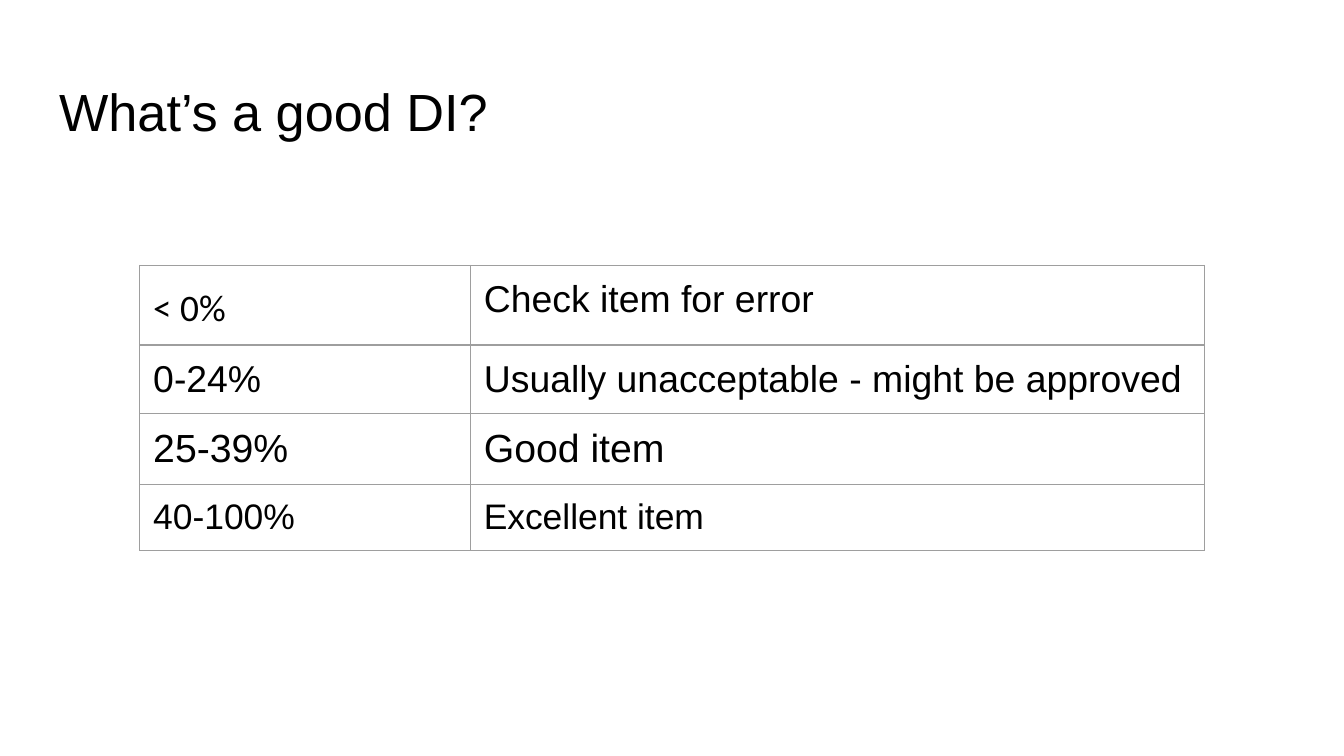
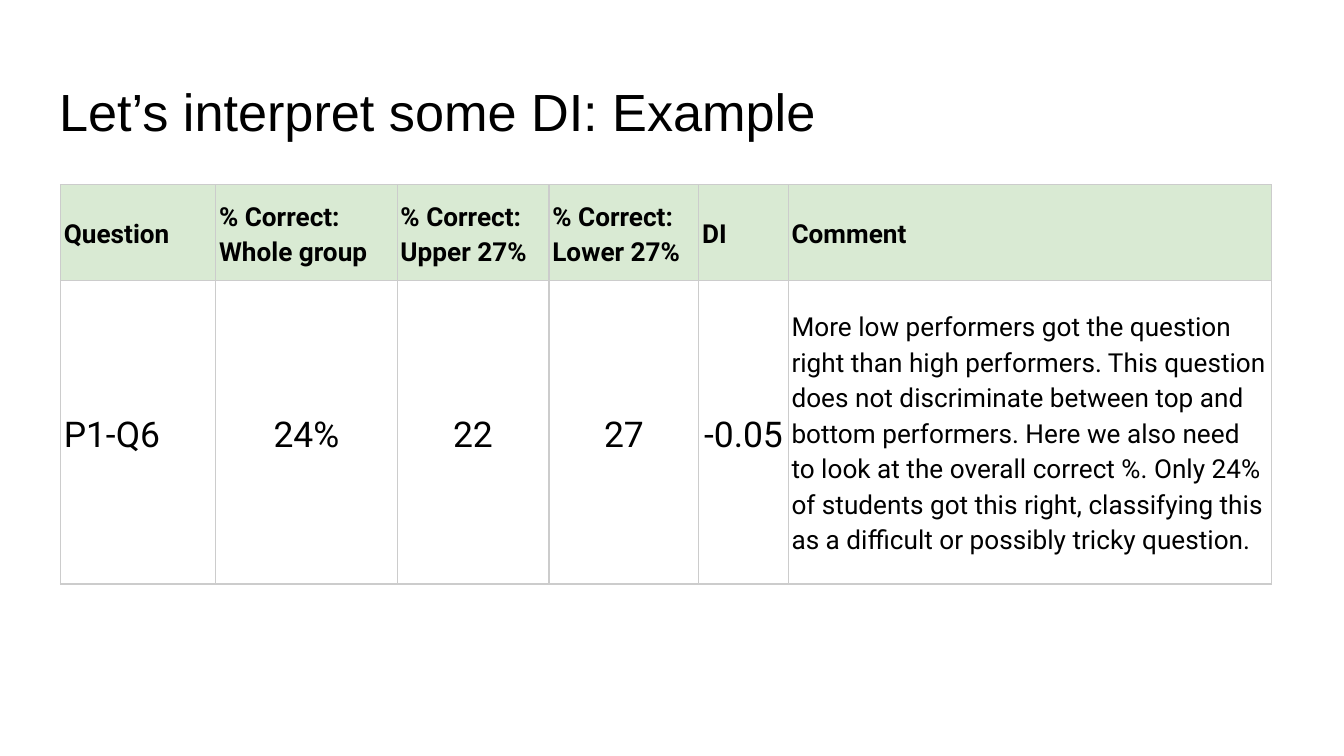
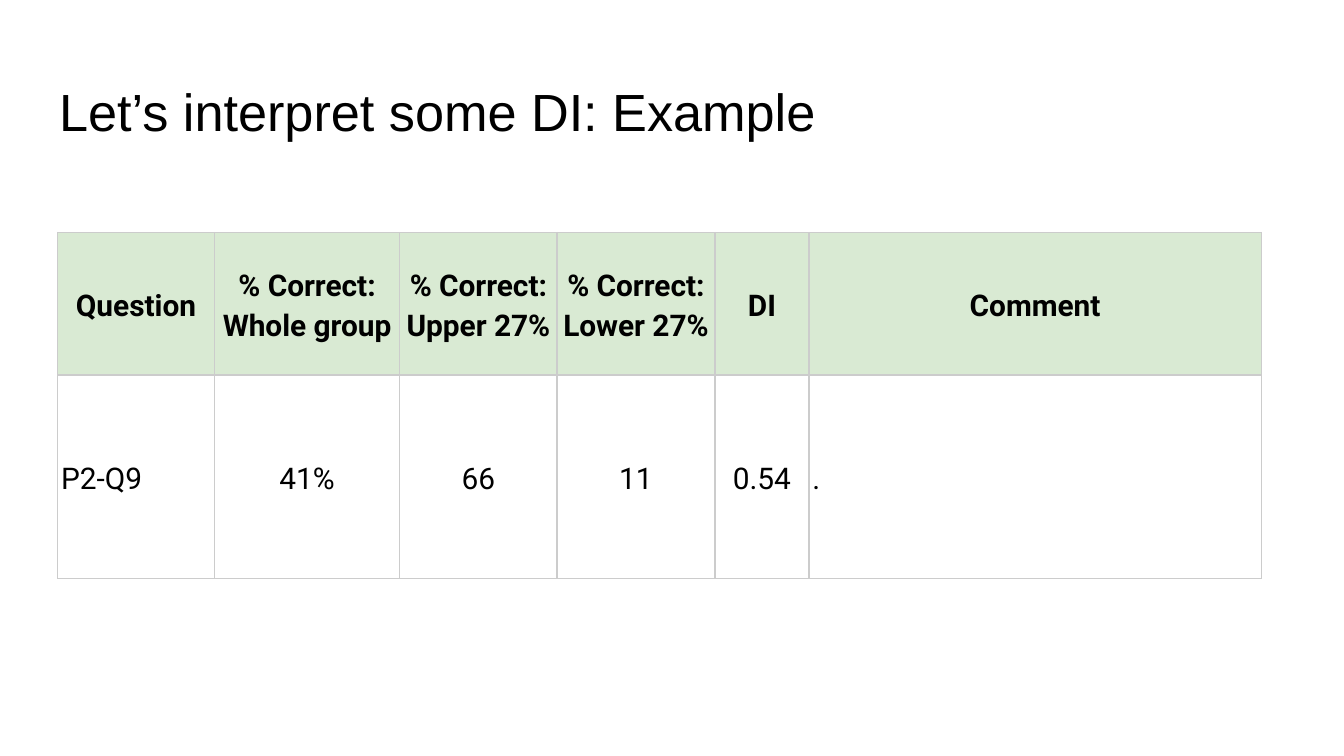
from dataclasses import dataclass

from lxml.etree import SubElement
from pptx import Presentation
from pptx.dml.color import RGBColor
from pptx.enum.text import MSO_ANCHOR, PP_ALIGN
from pptx.oxml.ns import qn
from pptx.util import Emu, Pt

# Shared scale, colours and fonts
PX = 4572  # 200 px to the inch
BLACK = RGBColor(0x00, 0x00, 0x00)
GREY = RGBColor(0x9E, 0x9E, 0x9E)
LIGHT_GREY = RGBColor(0xCC, 0xCC, 0xCC)
PALE_GREEN = RGBColor(0xD9, 0xEA, 0xD3)
TITLE_FONT = "Arial"
TITLE_SIZE = 28
BORDER_WIDTH = 0.75
LEFT, CENTER = PP_ALIGN.LEFT, PP_ALIGN.CENTER


@dataclass
class CellSpec:
    text: str
    size: int
    font: str = "Arial"
    bold: bool = False
    align: PP_ALIGN = LEFT
    line_spacing: float = 1.0
    space_before: int = 0
    fill: RGBColor | None = None


@dataclass
class TableSpec:
    left: int
    top: int
    columns: list[int]
    rows: list[int]
    cells: list[list[CellSpec]]
    border: RGBColor
    inset: int
    anchor: MSO_ANCHOR


@dataclass
class PageSpec:
    title: str
    table: TableSpec


def px(length: int) -> Emu:
    return Emu(length * PX)


def set_insets(target, inset: int) -> None:
    """Give a text frame or a table cell the same margin on every side."""
    for side in ("left", "top", "right", "bottom"):
        setattr(target, f"margin_{side}", px(inset))


def format_text(para, font: str, size: int, bold: bool = False) -> None:
    for span in para.runs:
        span.font.name = font
        span.font.size = Pt(size)
        span.font.bold = bold
        span.font.color.rgb = BLACK


def add_borders(cell, color: RGBColor) -> None:
    """Insert the four edges ahead of the cell's fill, as the schema requires."""
    properties = cell._tc.get_or_add_tcPr()
    for position, edge in enumerate(("lnL", "lnR", "lnT", "lnB")):
        line = SubElement(properties, qn(f"a:{edge}"), w=str(Pt(BORDER_WIDTH)))
        solid = SubElement(line, qn("a:solidFill"))
        SubElement(solid, qn("a:srgbClr"), val=str(color))
        properties.insert(position, line)


def draw_cell(cell, spec: CellSpec, table: TableSpec) -> None:
    cell.text_frame.text = spec.text
    cell.vertical_anchor = table.anchor
    set_insets(cell, table.inset)
    para = cell.text_frame.paragraphs[0]
    para.alignment = spec.align
    para.line_spacing = spec.line_spacing
    para.space_before = Pt(spec.space_before)
    format_text(para, spec.font, spec.size, spec.bold)
    if spec.fill is None:
        cell.fill.background()
    else:
        cell.fill.solid()
        cell.fill.fore_color.rgb = spec.fill
    add_borders(cell, table.border)


def draw_table(page, spec: TableSpec) -> None:
    frame = page.shapes.add_table(
        len(spec.rows), len(spec.columns), px(spec.left), px(spec.top),
        px(sum(spec.columns)), px(sum(spec.rows)))
    table = frame.table
    table.first_row = False
    table.horz_banding = False
    for column, width in zip(table.columns, spec.columns):
        column.width = px(width)
    for row, height, cells in zip(table.rows, spec.rows, spec.cells):
        row.height = px(height)
        for cell, cell_spec in zip(row.cells, cells):
            draw_cell(cell, cell_spec, spec)


def draw_title(page, text: str) -> None:
    title = page.shapes.title
    title.left, title.top, title.width, title.height = map(px, (68, 98, 1864, 126))
    frame = title.text_frame
    frame.text = text
    frame.word_wrap = True
    frame.vertical_anchor = MSO_ANCHOR.TOP
    set_insets(frame, 20)
    para = frame.paragraphs[0]
    para.alignment = LEFT
    format_text(para, TITLE_FONT, TITLE_SIZE)


# Scale of discrimination index (DI) values
def scale_table() -> TableSpec:
    ratings = [
        ("0-24%", "Usually unacceptable - might be approved", 20),
        ("25-39%", "Good item", 21),
        ("40-100%", "Excellent item", 19),
    ]
    first_row = [
        CellSpec("< 0%", 20, "Calibri", line_spacing=1.15, space_before=7),
        CellSpec("Check item for error", 20),
    ]
    cells = [first_row] + [
        [CellSpec(span, size), CellSpec(verdict, size)]
        for span, verdict, size in ratings]
    return TableSpec(208, 395, [492, 1092], [84] * len(cells), cells,
                     GREY, 20, MSO_ANCHOR.TOP)


# Results of one exam question
HEADINGS = ["Question", "% Correct: Whole group", "% Correct: Upper 27%",
            "% Correct: Lower 27%", "DI", "Comment"]


def question_table(left: int, top: int, columns: list[int], rows: list[int],
                   values: list[str], heading_size: int, value_size: int,
                   heading_align: PP_ALIGN) -> TableSpec:
    """Comments share the heading size; the figures between are centred."""
    header = [CellSpec(heading, heading_size, "Roboto", True, heading_align,
                       1.15, fill=PALE_GREEN) for heading in HEADINGS]
    question, *figures, comment = values
    result = [
        CellSpec(question, value_size, "Roboto", line_spacing=1.15),
        *(CellSpec(figure, value_size, "Roboto", align=CENTER, line_spacing=1.15)
          for figure in figures),
        CellSpec(comment, heading_size, "Roboto", line_spacing=1.15),
    ]
    return TableSpec(left, top, columns, rows, [header, result],
                     LIGHT_GREY, 5, MSO_ANCHOR.MIDDLE)


EXAMPLE_TITLE = "Let’s interpret some DI: Example"
COMMENT = (
    "More low performers got the question right than high performers. "
    "This question does not discriminate between top and bottom performers. "
    "Here we also need to look at the overall correct %. Only 24% of students "
    "got this right, classifying this as a difficult or possibly tricky question.")

PAGES = [
    PageSpec("What’s a good DI?", scale_table()),
    PageSpec(EXAMPLE_TITLE, question_table(
        90, 275, [231, 270, 226, 223, 133, 719], [142, 452],
        ["P1-Q6", "24%", "22", "27", "-0.05", COMMENT], 14, 19, LEFT)),
    PageSpec(EXAMPLE_TITLE, question_table(
        86, 346, [233, 276, 234, 235, 140, 673], [212, 303],
        ["P2-Q9", "41%", "66", "11", "0.54", "."], 16, 16, CENTER)),
]


def main() -> None:
    deck = Presentation()
    deck.slide_width, deck.slide_height = px(2000), px(1125)
    title_only = deck.slide_layouts[5]
    for spec in PAGES:
        page = deck.slides.add_slide(title_only)
        draw_title(page, spec.title)
        draw_table(page, spec.table)
    deck.save("out.pptx")


if __name__ == "__main__":
    main()
